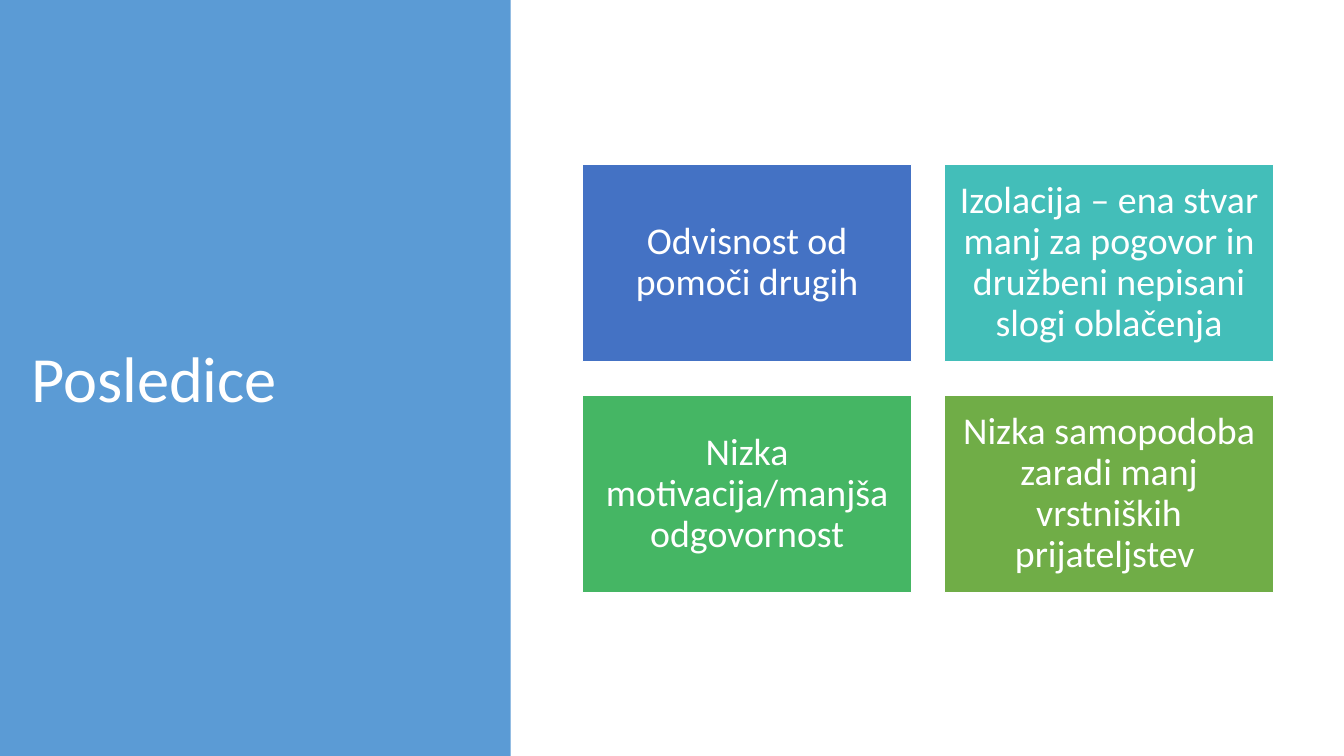
import pptx
import pptx.util
import pptx.dml.color
import pptx.enum.shapes
import pptx.enum.text

Inches = pptx.util.Inches
Color = pptx.dml.color.RGBColor.from_string
Align = pptx.enum.text.PP_ALIGN

THEME = {
    "font": "Calibri",
    "text": "FFFFFF",
    "panel": "5B9BD5",
    "cards": ["4472C4", "43BEB9", "45B664", "70AD47"],
    "title_size": 46,
    "card_size": 27,
}
CONSEQUENCES = [
    "Odvisnost od pomoči drugih",
    "Izolacija – ena stvar manj za pogovor in družbeni nepisani slogi oblačenja",
    "Nizka motivacija/manjša odgovornost",
    "Nizka samopodoba zaradi manj vrstniških prijateljstev ",
]
COLUMNS = 2
GRID_LEFT, GRID_TOP = 5.78, 1.63
CARD_WIDTH, CARD_HEIGHT = 3.26, 1.96
GAP = 0.33


def add_block(left, top, width, height, color):
    block = slide.shapes.add_shape(
        pptx.enum.shapes.MSO_SHAPE.RECTANGLE, left, top, width, height)
    block.shadow.inherit = False
    block.fill.solid()
    block.fill.fore_color.rgb = Color(color)
    block.line.fill.background()
    return block


def write(shape, text, size, alignment, margin):
    frame = shape.text_frame
    frame.text = text
    frame_format = {
        "word_wrap": True,
        "auto_size": pptx.enum.text.MSO_AUTO_SIZE.NONE,
        "vertical_anchor": pptx.enum.text.MSO_ANCHOR.MIDDLE,
        "margin_left": margin,
        "margin_right": margin,
        "margin_top": margin,
        "margin_bottom": margin,
    }
    paragraph = frame.paragraphs[0]
    paragraph_format = {"alignment": alignment, "line_spacing": 0.9}
    font = paragraph.runs[0].font
    font_format = {"name": THEME["font"], "size": pptx.util.Pt(size)}
    for target, values in ((frame, frame_format), (paragraph, paragraph_format),
                           (font, font_format)):
        for name, value in values.items():
            setattr(target, name, value)
    font.color.rgb = Color(THEME["text"])


presentation = pptx.Presentation()
presentation.slide_width = Inches(13.33)
presentation.slide_height = Inches(7.5)
slide = presentation.slides.add_slide(presentation.slide_layouts[5])

title = slide.shapes.title
panel = add_block(0, 0, int(presentation.slide_width * 0.38),
                  presentation.slide_height, THEME["panel"])
title._element.addprevious(panel._element)

title_place = {"left": 0.21, "top": 0.78, "width": 4.58, "height": 6.02}
for name, value in title_place.items():
    setattr(title, name, Inches(value))
write(title, "Posledice", THEME["title_size"], Align.LEFT, Inches(0.1))

for index, (text, color) in enumerate(zip(CONSEQUENCES, THEME["cards"])):
    row, column = divmod(index, COLUMNS)
    card = add_block(
        Inches(GRID_LEFT + column * (CARD_WIDTH + GAP)),
        Inches(GRID_TOP + row * (CARD_HEIGHT + GAP)),
        Inches(CARD_WIDTH), Inches(CARD_HEIGHT), color)
    card.line.color.rgb = Color(THEME["text"])
    card.line.width = pptx.util.Pt(1)
    write(card, text, THEME["card_size"], Align.CENTER, Inches(0.11))

presentation.save("out.pptx")
